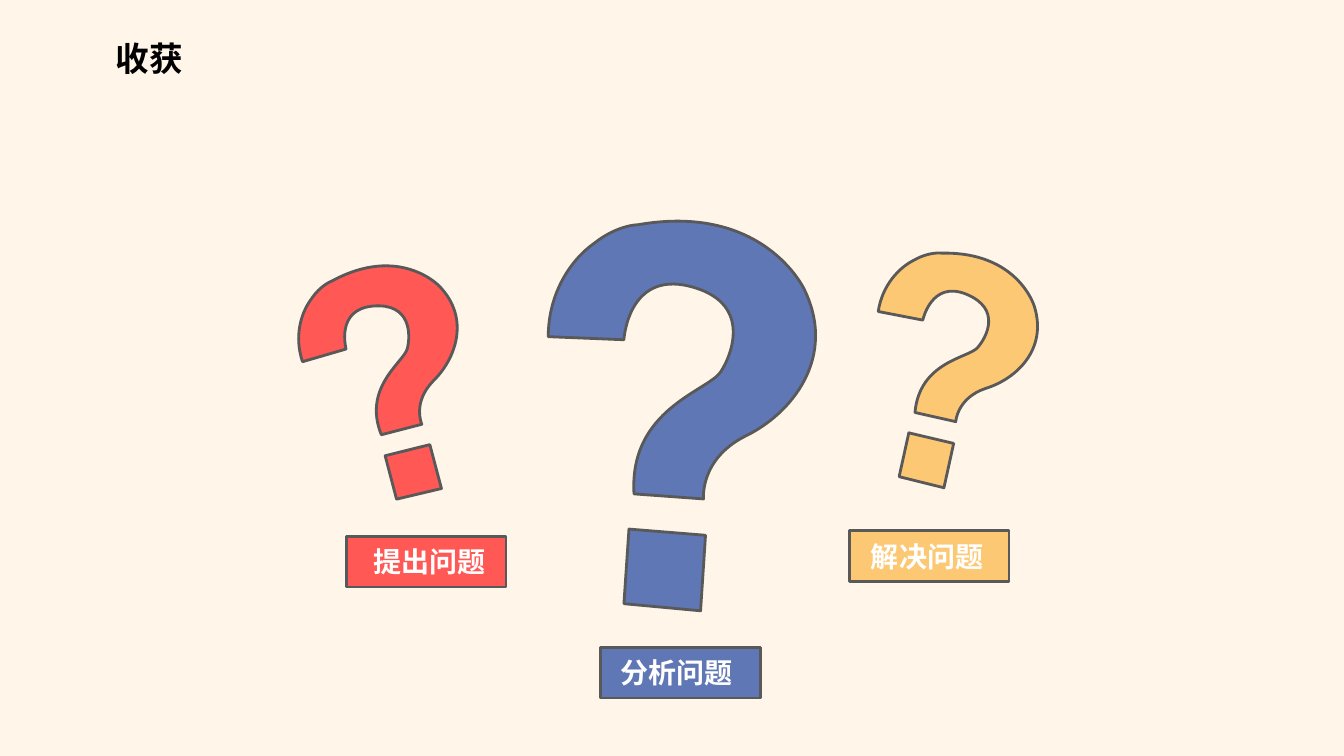
from math import cos, radians, sin

from pptx import Presentation
from pptx.dml.color import RGBColor
from pptx.enum.shapes import MSO_SHAPE
from pptx.enum.text import MSO_ANCHOR, MSO_AUTO_SIZE, PP_ALIGN
from pptx.oxml.ns import qn
from pptx.oxml.xmlchemy import OxmlElement
from pptx.util import Inches, Pt

COLORS = {
    "background": "FFF5E9",
    "outline": "595959",
    "title": "000000",
    "label": "FFFFFF",
    "red": "FF5855",
    "blue": "6077B6",
    "yellow": "FDC873",
}

presentation = Presentation()
presentation.slide_height = Inches(7.5)
presentation.slide_width = presentation.slide_height * 16 // 9
CELL = presentation.slide_height / 90


def cells(*counts):
    return [round(count * CELL) for count in counts]


def paint(shape, color):
    shape.shadow.inherit = False
    shape.fill.solid()
    shape.fill.fore_color.rgb = RGBColor.from_string(COLORS[color])
    shape.line.color.rgb = RGBColor.from_string(COLORS["outline"])
    shape.line.width = Pt(2)


hook = [
    (-15.17, 6.06),
    (-6.8, 2.72), (-6.8, 2.72), (-6.8, 2.72),
    (-6.8, 2.72), (-9.7, -4.93), (-2.28, -6.28),
    (5.14, -7.62), (5.72, -1.31), (5.28, 1.52),
    (4.79, 4.23), (-2.88, 10.03), (1.79, 18.98),
    (9.59, 16.15), (9.59, 16.15), (9.59, 16.15),
    (9.59, 16.15), (7.24, 12.07), (11.04, 7.35),
    (15, 2.69), (17.3, -5.7), (10.35, -11.53),
    (10.35, -11.53), (1.76, -18.99), (-10.86, -10.46),
    (-10.86, -10.46), (-13.05, -9.48), (-14.68, -6.38),
    (-16.42, -3.5), (-17.32, 1.24), (-15.17, 6.06),
]
dot = [(-5.87, -2.65), (-2.79, 5.7), (5.88, 2.75), (2.75, -5.7), (-5.87, -2.65)]
mark_parts = [(dot, (8.82, 25.71), False), (hook, (0, 0), True)]

slide = presentation.slides.add_slide(presentation.slide_layouts[5])
slide.background.fill.solid()
slide.background.fill.fore_color.rgb = RGBColor.from_string(COLORS["background"])

title = slide.shapes.title
title.left, title.top, title.width, title.height = cells(12.6, 3.9, 10.6, 6)
title.text = "收获"
title.text_frame.word_wrap = False
title.text_frame.auto_size = MSO_AUTO_SIZE.SHAPE_TO_FIT_TEXT
title.text_frame.vertical_anchor = MSO_ANCHOR.TOP
paragraph = title.text_frame.paragraphs[0]
paragraph.alignment = PP_ALIGN.JUSTIFY
paragraph.font.name = "Calibri"
paragraph.font.size = Pt(24)
paragraph.font.bold = True
paragraph.font.color.rgb = RGBColor.from_string(COLORS["title"])

questions = [
    ("提出问题", "red", (45.42, 40.32), 0.6, 5.5, (41.25, 63.84), 2.9),
    ("分析问题", "blue", (81.6, 40.74), 1, 24.1, (71.5, 77.04), 2),
    ("解决问题", "yellow", (114.18, 38.94), 0.6, 32.7, (101.12, 63.2), 2.25),
]
for label, color, (center_x, center_y), scale, angle, (left, top), indent in questions:
    group = slide.shapes.add_group_shape()
    cosine, sine = scale * cos(radians(angle)), scale * sin(radians(angle))
    for outline, (offset_x, offset_y), curved in mark_parts:
        part_x = center_x + offset_x * cosine - offset_y * sine
        part_y = center_y + offset_x * sine + offset_y * cosine
        points = [cells(part_x + x * scale, part_y + y * scale) for x, y in outline]
        builder = group.shapes.build_freeform(*points[0])
        builder.add_line_segments(points[1:], close=True)
        shape = builder.convert_to_shape()
        shape.rotation = angle
        paint(shape, color)
        if curved:
            segments = list(shape.element.iter(qn("a:lnTo")))
            for first in range(0, len(segments), 3):
                curve = OxmlElement("a:cubicBezTo")
                segments[first].addprevious(curve)
                for segment in segments[first:first + 3]:
                    curve.append(segment[0])
                    segment.getparent().remove(segment)

    plate = group.shapes.add_shape(MSO_SHAPE.RECTANGLE, *cells(left, top, 19, 6.05))
    paint(plate, color)

    caption = group.shapes.add_textbox(*cells(left + indent, top + 1, 14, 4))
    frame = caption.text_frame
    frame.margin_left = frame.margin_right = frame.margin_top = frame.margin_bottom = 0
    frame.word_wrap = True
    frame.auto_size = MSO_AUTO_SIZE.SHAPE_TO_FIT_TEXT
    paragraph = frame.paragraphs[0]
    paragraph.text = label
    paragraph.alignment = PP_ALIGN.CENTER
    paragraph.font.name = "Arial"
    paragraph.font.size = Pt(20)
    paragraph.font.bold = True
    paragraph.font.color.rgb = RGBColor.from_string(COLORS["label"])

presentation.save("out.pptx")
